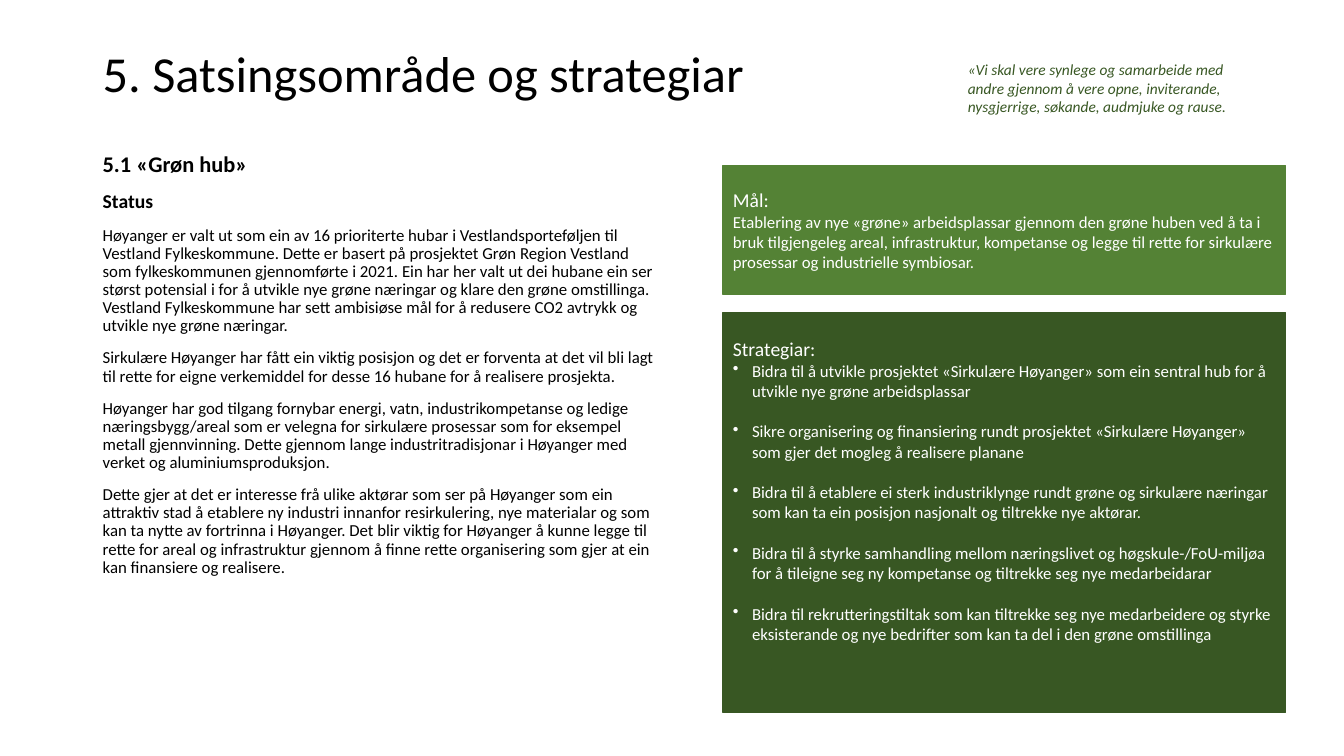
import pptx
import pptx.util
import pptx.dml.color
import pptx.enum.shapes
import pptx.enum.text
import pptx.oxml
import pptx.oxml.ns

Inches = pptx.util.Inches
Pt = pptx.util.Pt
RGBColor = pptx.dml.color.RGBColor
MIDDLE = pptx.enum.text.MSO_ANCHOR.MIDDLE

BLACK = RGBColor(0x00, 0x00, 0x00)
WHITE = RGBColor(0xFF, 0xFF, 0xFF)
GREEN = RGBColor(0x54, 0x82, 0x35)
DARK_GREEN = RGBColor(0x38, 0x57, 0x23)

STATUS = [
    ("5.1 «Grøn hub»", 16, True),
    ("Status", 14, True),
    ("Høyanger er valt ut som ein av 16 prioriterte hubar i Vestlandsporteføljen til "
     "Vestland Fylkeskommune. Dette er basert på prosjektet Grøn Region Vestland som "
     "fylkeskommunen gjennomførte i 2021. Ein har her valt ut dei hubane ein ser størst "
     "potensial i for å utvikle nye grøne næringar og klare den grøne omstillinga. "
     "Vestland Fylkeskommune har sett ambisiøse mål for å redusere CO2 avtrykk og "
     "utvikle nye grøne næringar.", 12, False),
    ("Sirkulære Høyanger har fått ein viktig posisjon og det er forventa at det vil bli "
     "lagt til rette for eigne verkemiddel for desse 16 hubane for å realisere "
     "prosjekta.", 12, False),
    ("Høyanger har god tilgang fornybar energi, vatn, industrikompetanse og ledige "
     "næringsbygg/areal som er velegna for sirkulære prosessar som for eksempel metall "
     "gjennvinning. Dette gjennom lange industritradisjonar i Høyanger med verket og "
     "aluminiumsproduksjon.", 12, False),
    ("Dette gjer at det er interesse frå ulike aktørar som ser på Høyanger som ein "
     "attraktiv stad å etablere ny industri innanfor resirkulering, nye materialar og som "
     "kan ta nytte av fortrinna i Høyanger. Det blir viktig for Høyanger å kunne legge til "
     "rette for areal og infrastruktur gjennom å finne rette organisering som gjer at ein "
     "kan finansiere og realisere.", 12, False),
]
GOAL = ("Etablering av nye «grøne» arbeidsplassar gjennom den grøne huben ved å ta i bruk "
        "tilgjengeleg areal, infrastruktur, kompetanse og legge til rette for sirkulære "
        "prosessar og industrielle symbiosar.")
STRATEGIES = [
    "Bidra til å utvikle prosjektet «Sirkulære Høyanger» som ein sentral hub for å utvikle "
    "nye grøne arbeidsplassar",
    "Sikre organisering og finansiering rundt prosjektet «Sirkulære Høyanger» som gjer det "
    "mogleg å realisere planane",
    "Bidra til å etablere ei sterk industriklynge rundt grøne og sirkulære næringar som kan "
    "ta ein posisjon nasjonalt og tiltrekke nye aktørar.",
    "Bidra til å styrke samhandling mellom næringslivet og høgskule-/FoU-miljøa for å "
    "tileigne seg ny kompetanse og tiltrekke seg nye medarbeidarar",
    "Bidra til rekrutteringstiltak som kan tiltrekke seg nye medarbeidere og styrke "
    "eksisterande og nye bedrifter som kan ta del i den grøne omstillinga",
]


def add_text_box(left, top, width, height):
    tf = s.shapes.add_textbox(Inches(left), Inches(top), Inches(width), Inches(height)).text_frame
    tf.word_wrap = True
    return tf


def add_paragraph(tf, text, size, color):
    p = tf.add_paragraph() if tf.text else tf.paragraphs[0]
    p.text = text
    p.alignment = pptx.enum.text.PP_ALIGN.LEFT
    p.font.name = "Calibri"
    p.font.size = Pt(size)
    p.font.color.rgb = color
    return p


prs = pptx.Presentation()
prs.slide_width = Inches(13.33)
prs.slide_height = Inches(7.5)
s = prs.slides.add_slide(prs.slide_layouts[6])

tf = add_text_box(0.92, 0.37, 11.5, 0.78)
tf.vertical_anchor = MIDDLE
p = add_paragraph(tf, "5. Satsingsområde og strategiar", 36, BLACK)
p.line_spacing = 0.9

tf = add_text_box(0.92, 1.47, 5.68, 5.25)
for text, size, bold in STATUS:
    p = add_paragraph(tf, text, size, BLACK)
    p.font.bold = bold
    p.line_spacing = 0.9
    p.space_before = Pt(10)

panels = []
for heading, top, height, color in [("Mål:", 1.64, 1.28, GREEN),
                                    ("Strategiar:", 3.1, 3.97, DARK_GREEN)]:
    sp = s.shapes.add_shape(pptx.enum.shapes.MSO_SHAPE.RECTANGLE,
                            Inches(7.17), Inches(top), Inches(5.58), Inches(height))
    sp.shadow.inherit = False
    sp.fill.solid()
    sp.fill.fore_color.rgb = color
    sp.line.color.rgb = color
    sp.line.width = Pt(1)
    tf = sp.text_frame
    tf.word_wrap = True
    tf.vertical_anchor = MIDDLE
    add_paragraph(tf, heading, 14, WHITE)
    panels.append(tf)

goal_tf, strategy_tf = panels
add_paragraph(goal_tf, GOAL, 12, WHITE)

strategy_tf.margin_bottom = Inches(0.49)
for i, text in enumerate(STRATEGIES):
    p = add_paragraph(strategy_tf, text, 12, WHITE)
    p.space_before = Pt(14.65 if i else 0)
    pPr = p._p.get_or_add_pPr()
    pPr.set("marL", str(Inches(0.19)))
    pPr.set("indent", str(Inches(-0.19)))
    bullet = pptx.oxml.parse_xml(
        f'<a:buChar {pptx.oxml.ns.nsdecls("a")} char="•"/>')
    pPr.insert_element_before(bullet, "a:tabLst", "a:defRPr", "a:extLst")

tf = add_text_box(9.5, 0.55, 2.92, 0.66)
p = add_paragraph(tf, "«Vi skal vere synlege og samarbeide med andre gjennom å vere opne, "
                      "inviterande, nysgjerrige, søkande, audmjuke og rause.", 11, DARK_GREEN)
p.font.italic = True

prs.save("out.pptx")
